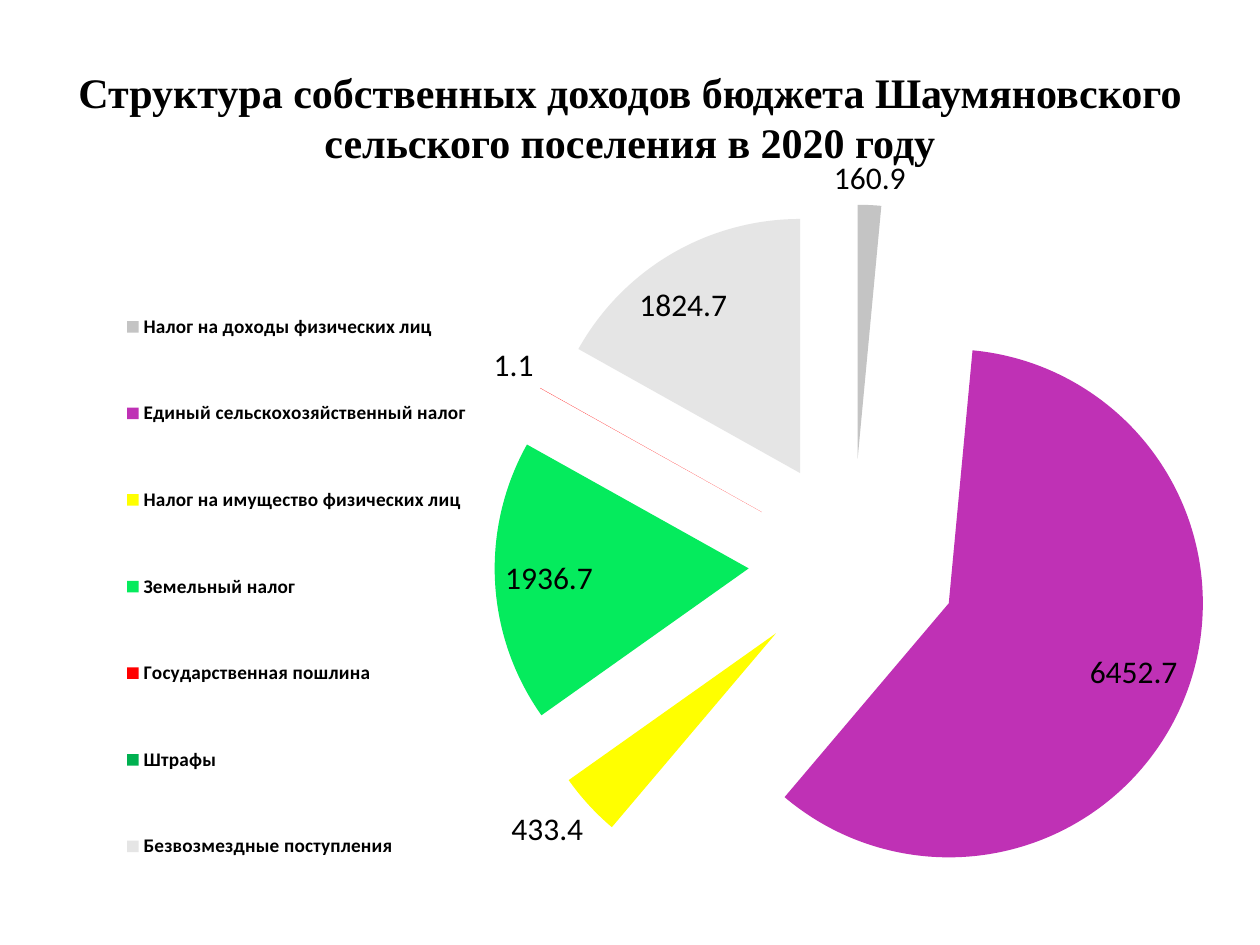
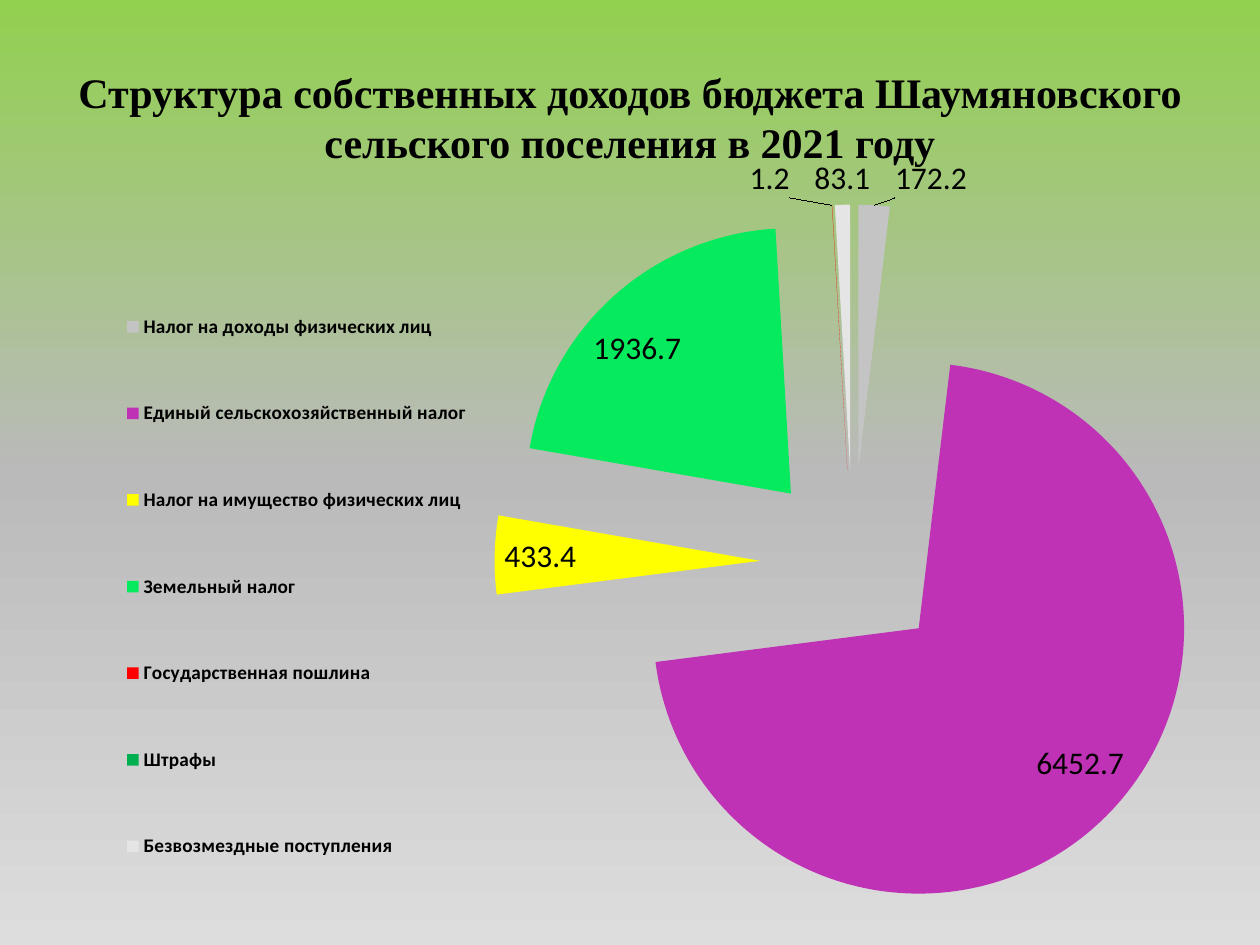
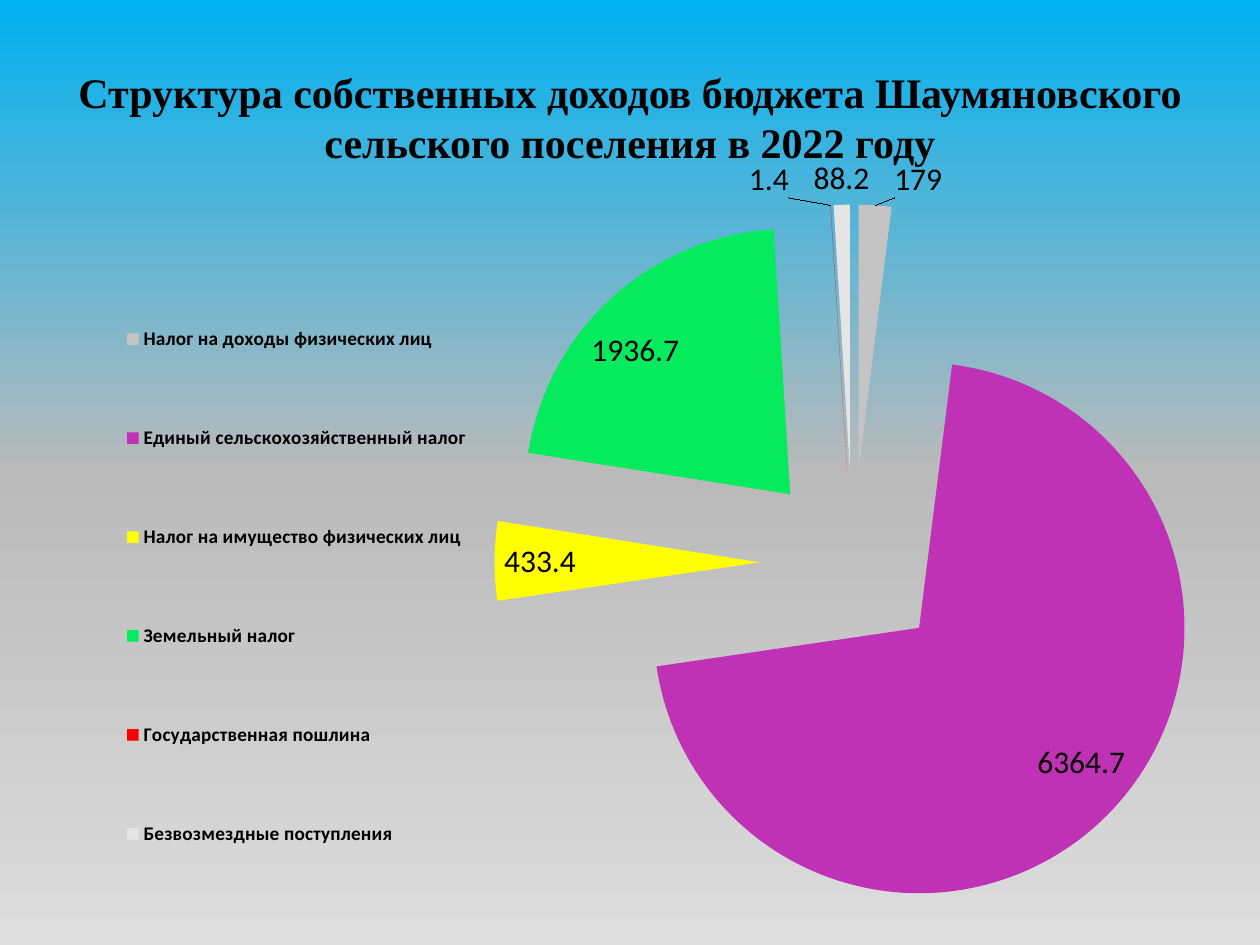
from copy import deepcopy

from lxml import etree
from pptx import Presentation
from pptx import util as u
from pptx.chart.data import CategoryChartData
from pptx.dml.color import RGBColor
from pptx.enum import chart as ch
from pptx.enum import text
from pptx.oxml import parse_xml
from pptx.oxml.ns import qn

NS = 'xmlns:c="http://schemas.openxmlformats.org/drawingml/2006/chart"'
TAXES = ["Налог на доходы физических лиц", "Единый сельскохозяйственный налог",
         "Налог на имущество физических лиц", "Земельный налог",
         "Государственная пошлина", "Штрафы", "Безвозмездные поступления"]
HUES = ["C4C4C4", "BF31B5", "FFFF00", "05EB5D", "FF0000", "00B050", "E5E5E5"]
FINES = TAXES.index("Штрафы")
YEARS = [
    (2020, ["FFFFFF"], 41, [160.9, 6452.7, 433.4, 1936.7, 1.1, 0, 1824.7]),
    (2021, ["92D050", "BABABA", "DDDDDD"], 35,
     [172.2, 6452.7, 433.4, 1936.7, 1.2, 0, 83.1]),
    (2022, ["00B0F0", "BABABA", "DDDDDD"], 35,
     [179, 6364.7, 433.4, 1936.7, 1.4, None, 88.2]),
]


def rgb(hue):
    return RGBColor.from_string(hue)


def layout(x, y, w, h, inner=False):
    """Manual chart layout in fractions of the chart's size."""
    root = etree.Element(qn("c:layout"))
    box = etree.SubElement(root, qn("c:manualLayout"))
    parts = [("layoutTarget", "inner")] if inner else []
    parts += [("xMode", "edge"), ("yMode", "edge"),
              ("x", x), ("y", y), ("w", w), ("h", h)]
    for tag, val in parts:
        etree.SubElement(box, qn("c:" + tag)).set("val", str(val))
    return root


class Deck:
    ink = "000000"

    def __init__(self):
        self.prs = Presentation()
        self.prs.slide_width, self.prs.slide_height = u.Inches(10), u.Inches(7.5)

    def page(self, hues):
        """Start a slide on a plain ground or a top-down gradient."""
        self.slide = self.prs.slides.add_slide(self.prs.slide_layouts[6])
        fill = self.slide.background.fill
        if len(hues) == 1:
            fill.solid()
            fill.fore_color.rgb = rgb(hues[0])
            return
        fill.gradient()
        fill.gradient_angle = 270
        first = next(self.slide.element.iter(qn("a:gs")))
        for _ in hues[2:]:
            first.addnext(deepcopy(first))
        for i, (stop, hue) in enumerate(zip(fill.gradient_stops, hues)):
            stop.color.rgb = rgb(hue)
            stop.position = i / (len(hues) - 1)

    def font(self, font, name, size, bold=False):
        font.name, font.size, font.bold = name, u.Pt(size), bold
        font.color.rgb = rgb(self.ink)

    def title(self, words):
        box = self.slide.shapes.add_textbox(
            u.Inches(0.5), u.Inches(0.3), u.Inches(9), u.Inches(1.25))
        frame = box.text_frame
        frame.word_wrap = True
        frame.vertical_anchor = text.MSO_ANCHOR.MIDDLE
        para = frame.paragraphs[0]
        para.text = words
        para.alignment = text.PP_ALIGN.CENTER
        self.font(para.font, "Times New Roman", 24, True)

    def pie(self, names, vals, burst):
        data = CategoryChartData()
        data.categories = names
        data.add_series("Series 1", vals)
        chart = self.slide.shapes.add_chart(
            ch.XL_CHART_TYPE.PIE, u.Inches(0), u.Inches(1.25),
            u.Inches(9.81), u.Inches(6.25), data).chart
        chart.has_title = False
        self.font(chart.font, "Calibri", 18)
        chart.plots[0].vary_by_categories = True
        area = chart.element.find(".//" + qn("c:plotArea"))
        for old in area.findall(qn("c:layout")):
            area.remove(old)
        area.insert(0, layout(0.39, 0.06, 0.6, 0.91, inner=True))
        self.slices(chart, burst)
        self.legend(chart, "" in names)

    def slices(self, chart, burst):
        series = chart.plots[0].series[0]
        node = chart.element.find(".//" + qn("c:ser"))
        node.find(qn("c:tx")).addnext(
            parse_xml(f'<c:explosion {NS} val="{burst}"/>'))
        for i, hue in enumerate(HUES):
            form = series.points[i].format
            form.fill.solid()
            form.fill.fore_color.rgb = rgb(hue)
            form.line.fill.background()
        tags = series.data_labels
        tags.show_value = True
        tags.position = ch.XL_LABEL_POSITION.BEST_FIT
        self.font(tags.font, "Calibri", 18)
        node.find(qn("c:dLbls")).insert(0, parse_xml(
            f'<c:dLbl {NS}><c:idx val="{FINES}"/><c:delete val="1"/></c:dLbl>'))

    def legend(self, chart, hide):
        chart.has_legend = True
        key = chart.legend
        key.position = ch.XL_LEGEND_POSITION.RIGHT
        key.include_in_layout = False
        self.font(key.font, "Calibri", 11, True)
        root = chart.element.find(".//" + qn("c:legend"))
        for old in root.findall(qn("c:layout")):
            root.remove(old)
        over = root.find(qn("c:overlay"))
        if hide:
            over.addprevious(parse_xml(
                f'<c:legendEntry {NS}><c:idx val="{FINES}"/>'
                '<c:delete val="1"/></c:legendEntry>'))
        over.addprevious(layout(0.08, 0.12, 0.32, 0.85))


def main():
    deck = Deck()
    for year, hues, burst, vals in YEARS:
        deck.page(hues)
        deck.title("Структура собственных доходов бюджета Шаумяновского "
                   f"сельского поселения в {year} году")
        names = ["" if val is None else tax for tax, val in zip(TAXES, vals)]
        deck.pie(names, vals, burst)
    deck.prs.save("out.pptx")


if __name__ == "__main__":
    main()
